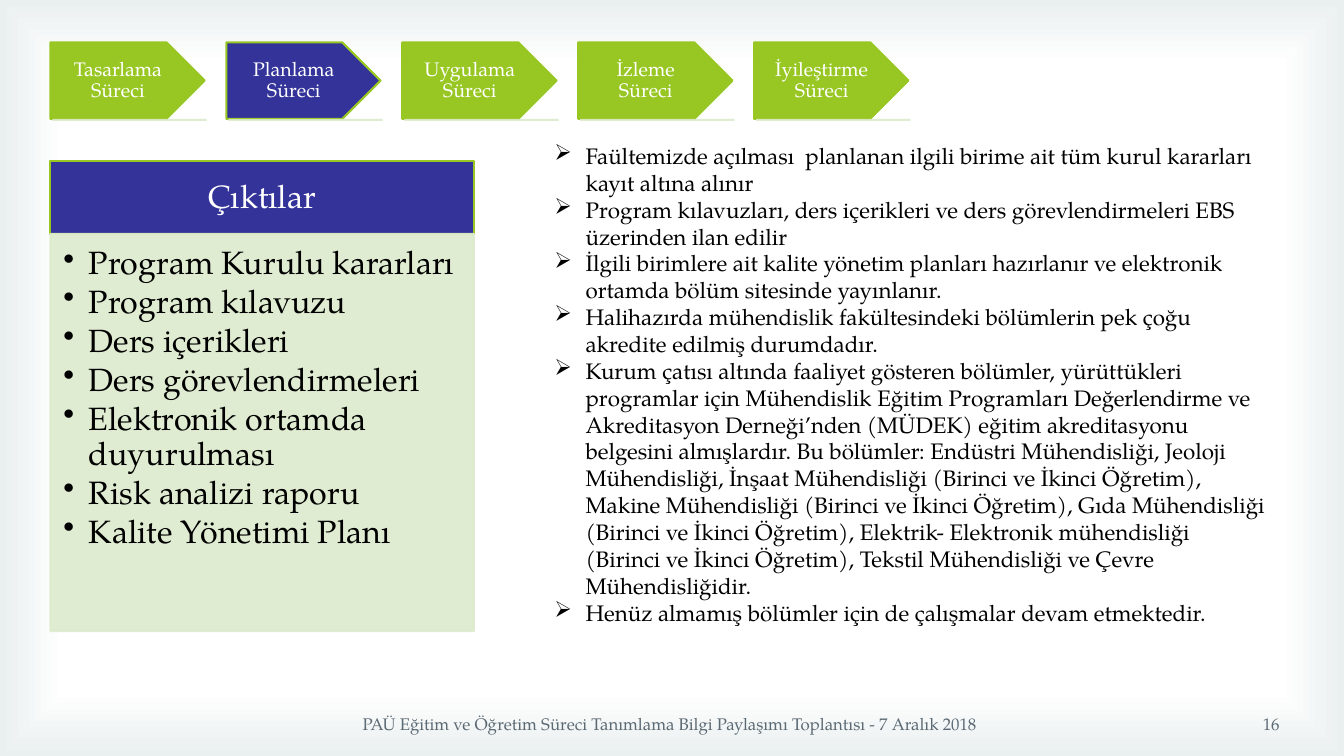
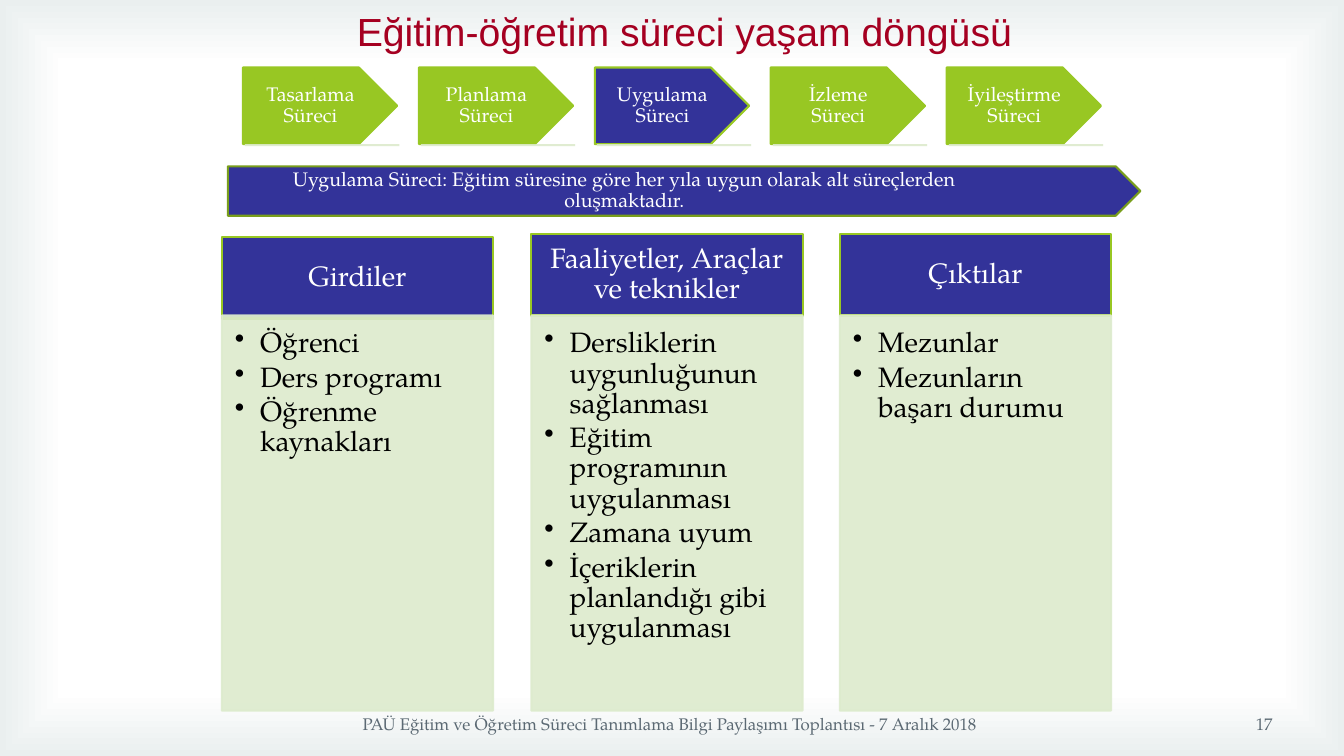
"""Build two slides on the education process life cycle."""
from dataclasses import dataclass
from typing import Any, Optional

import lxml.etree
import pptx
import pptx.dml.color
import pptx.enum.shapes
import pptx.enum.text
import pptx.oxml.ns
import pptx.util

Inches = pptx.util.Inches
Pt = pptx.util.Pt
RGB = pptx.dml.color.RGBColor
Align = pptx.enum.text.PP_ALIGN
Anchor = pptx.enum.text.MSO_ANCHOR
Preset = pptx.enum.shapes.MSO_SHAPE
qn = pptx.oxml.ns.qn


@dataclass(frozen=True)
class Theme:
    font: str = "TeX Gyre Pagella"
    title_font: str = "Arial"
    white: RGB = RGB(0xFF, 0xFF, 0xFF)
    black: RGB = RGB(0, 0, 0)
    frame: RGB = RGB(0xEA, 0xEF, 0xEF)
    green: RGB = RGB(0x98, 0xC7, 0x23)
    dark_green: RGB = RGB(0x79, 0x9E, 0x1C)
    pale_green: RGB = RGB(0xDD, 0xEB, 0xCD)
    blue: RGB = RGB(0x33, 0x33, 0x99)
    red: RGB = RGB(0xA5, 0x00, 0x21)
    slate: RGB = RGB(0x5B, 0x69, 0x73)
    title_size: float = 28
    output_size: float = 23
    column_size: float = 20
    body_size: float = 16
    step_size: float = 14
    footer_size: float = 12
    outline: float = 1.5


@dataclass(frozen=True)
class Box:
    left: float
    top: float
    width: float
    height: float

    def lengths(self) -> tuple:
        return tuple(Inches(v) for v in (self.left, self.top, self.width, self.height))


@dataclass(frozen=True)
class Style:
    size: float
    color: RGB
    font: str = Theme.font
    align: Any = Align.LEFT
    anchor: Any = Anchor.TOP
    insets: tuple = (0.1, 0.05, 0.1, 0.05)
    line_spacing: float = 1.0
    space_after: float = 0
    bullet: Optional[str] = None
    indent: float = 0
    wrap: bool = True


@dataclass(frozen=True)
class Column:
    heading: str
    items: tuple
    header: Box
    body: Box
    size: float


THEME = Theme()
STEPS = ("Tasarlama", "Planlama", "Uygulama", "İzleme", "İyileştirme")
STEP_PITCH = 6.98 / (len(STEPS) - 1)
FOOTER = "PAÜ Eğitim ve Öğretim Süreci Tanımlama Bilgi Paylaşımı Toplantısı - 7 Aralık 2018"
TITLE = "Eğitim-öğretim süreci yaşam döngüsü"
BANNER = "Uygulama Süreci: Eğitim süresine göre her yıla uygun olarak alt süreçlerden oluşmaktadır."
PLANNING_NOTES = (
    "Faültemizde açılması  planlanan ilgili birime ait tüm kurul kararları kayıt altına alınır",
    "Program kılavuzları, ders içerikleri ve ders görevlendirmeleri EBS üzerinden ilan edilir",
    "İlgili birimlere ait kalite yönetim planları hazırlanır ve elektronik ortamda bölüm "
    "sitesinde yayınlanır.",
    "Halihazırda mühendislik fakültesindeki bölümlerin pek çoğu akredite edilmiş durumdadır.",
    "Kurum çatısı altında faaliyet gösteren bölümler, yürüttükleri programlar için Mühendislik "
    "Eğitim Programları Değerlendirme ve Akreditasyon Derneği’nden (MÜDEK) eğitim akreditasyonu "
    "belgesini almışlardır. Bu bölümler: Endüstri Mühendisliği, Jeoloji Mühendisliği, İnşaat "
    "Mühendisliği (Birinci ve İkinci Öğretim), Makine Mühendisliği (Birinci ve İkinci Öğretim), "
    "Gıda Mühendisliği (Birinci ve İkinci Öğretim), Elektrik- Elektronik mühendisliği (Birinci ve "
    "İkinci Öğretim), Tekstil Mühendisliği ve Çevre Mühendisliğidir.",
    "Henüz almamış bölümler için de çalışmalar devam etmektedir.",
)
PLANNING_OUTPUTS = Column(
    "Çıktılar",
    ("Program Kurulu kararları", "Program kılavuzu", "Ders içerikleri", "Ders görevlendirmeleri",
     "Elektronik ortamda duyurulması", "Risk analizi raporu", "Kalite Yönetimi Planı"),
    Box(0.5, 1.6, 4.2, 0.72), Box(0.5, 2.32, 4.2, 3.94), THEME.output_size,
)


def practice_column(left: float, top: float, heading: str, *items: str) -> Column:
    return Column(heading, items, Box(left, top, 2.69, 0.81), Box(left, 3.13, 2.69, 3.92),
                  THEME.column_size)


PRACTICE_COLUMNS = (
    practice_column(2.2, 2.35, "Girdiler", "Öğrenci", "Ders programı", "Öğrenme kaynakları"),
    practice_column(5.27, 2.32, "Faaliyetler, Araçlar ve teknikler",
                    "Dersliklerin uygunluğunun sağlanması", "Eğitim programının uygulanması",
                    "Zamana uyum", "İçeriklerin planlandığı gibi uygulanması"),
    practice_column(8.33, 2.32, "Çıktılar", "Mezunlar", "Mezunların başarı durumu"),
)


def write(frame: Any, lines: tuple, style: Style) -> None:
    frame.word_wrap = style.wrap
    frame.vertical_anchor = style.anchor
    (frame.margin_left, frame.margin_top,
     frame.margin_right, frame.margin_bottom) = (Inches(v) for v in style.insets)
    for index, line in enumerate(lines):
        paragraph = frame.add_paragraph() if index else frame.paragraphs[0]
        paragraph.text = line
        paragraph.alignment = style.align
        paragraph.line_spacing = style.line_spacing
        paragraph.space_after = Pt(style.space_after)
        if style.bullet:
            properties = paragraph._p.get_or_add_pPr()
            properties.set("marL", str(Inches(style.indent)))
            properties.set("indent", str(-Inches(style.indent)))
            lxml.etree.SubElement(properties, qn("a:buChar"), char=style.bullet)
        paragraph.font.size = Pt(style.size)
        paragraph.font.name = style.font
        paragraph.font.color.rgb = style.color


def add_text(slide: Any, box: Box, lines: tuple, style: Style) -> None:
    write(slide.shapes.add_textbox(*box.lengths()).text_frame, lines, style)


def add_panel(slide: Any, preset: Any, box: Box, fill: RGB, line: RGB,
              lines: tuple, style: Style) -> Any:
    panel = slide.shapes.add_shape(preset, *box.lengths())
    panel.shadow.inherit = False
    panel.fill.solid()
    panel.fill.fore_color.rgb = fill
    panel.line.color.rgb = line
    panel.line.width = Pt(THEME.outline)
    write(panel.text_frame, lines, style)
    return panel


def soften(part: Any) -> None:
    for color in part.element.spPr.iter(qn("a:srgbClr")):
        lxml.etree.SubElement(color, qn("a:alpha"), val="90000")


def label_style(size: float, insets: tuple) -> Style:
    return Style(size, THEME.white, align=Align.CENTER, anchor=Anchor.MIDDLE,
                 insets=insets, line_spacing=0.9)


def add_cycle(slide: Any, left: float, top: float, current: str) -> None:
    style = label_style(THEME.step_size, (0.11, 0.06, 0.11, 0.06))
    for index, step in enumerate(STEPS):
        box = Box(left + index * STEP_PITCH, top, 1.53, 0.76)
        fill = THEME.blue if step == current else THEME.green
        add_panel(slide, Preset.PENTAGON, box, fill, THEME.green, (f"{step} Süreci",), style)
        start, level = Inches(box.left + 0.02), Inches(top + 0.77)
        underline = slide.shapes.add_connector(
            pptx.enum.shapes.MSO_CONNECTOR.STRAIGHT,
            start, level, start + Inches(box.width), level)
        underline.line.color.rgb = THEME.pale_green
        underline.line.width = Pt(THEME.outline)
        soften(underline)
        lxml.etree.SubElement(underline.element.spPr, qn("a:effectLst"))


def add_column(slide: Any, column: Column) -> None:
    add_panel(slide, Preset.RECTANGLE, column.header, THEME.blue, THEME.green,
              (column.heading,), label_style(column.size, (0.16, 0.09, 0.16, 0.09)))
    items = Style(column.size, THEME.black, insets=(0.13, 0.13, 0.16, 0.17), line_spacing=0.9,
                  space_after=3, bullet="•", indent=0.25)
    soften(add_panel(slide, Preset.RECTANGLE, column.body, THEME.pale_green, THEME.pale_green,
                     column.items, items))


def add_footer(slide: Any, number: int, number_left: float) -> None:
    for box, text, align in (
        (Box(1.54, 6.98, 10.21, 0.4), FOOTER, Align.CENTER),
        (Box(number_left, 6.98, 3.11, 0.4), str(number), Align.RIGHT),
    ):
        add_text(slide, box, (text,),
                 Style(THEME.footer_size, THEME.slate, align=align, anchor=Anchor.MIDDLE))


def set_background(master: Any) -> None:
    fill = master.background.fill
    fill.gradient()
    for stop, position, color in zip(fill.gradient_stops, (0.83, 1), (THEME.white, THEME.frame)):
        stop.position = position
        stop.color.rgb = color
    linear = next(master.element.iter(qn("a:lin")))
    gradient = linear.getparent()
    gradient.remove(linear)
    route = lxml.etree.SubElement(gradient, qn("a:path"), {"path": "rect"})
    lxml.etree.SubElement(route, qn("a:fillToRect"), dict.fromkeys("ltrb", "50000"))


def build_planning(slide: Any) -> None:
    add_cycle(slide, 0.5, 0.42, "Planlama")
    add_column(slide, PLANNING_OUTPUTS)
    add_text(slide, Box(5.4, 1.36, 7.27, 4.95), PLANNING_NOTES,
             Style(THEME.body_size, THEME.black, bullet="➢", indent=0.31))
    add_footer(slide, 16, 9.68)


def build_practice(slide: Any) -> None:
    add_cycle(slide, 2.41, 0.67, "Uygulama")
    for column in PRACTICE_COLUMNS:
        add_column(slide, column)
    add_panel(slide, Preset.PENTAGON, Box(2.26, 1.65, 9.05, 0.49), THEME.blue, THEME.dark_green,
              (BANNER,), label_style(THEME.step_size, (0.08, 0.06, 1.14, 0.06)))
    add_text(slide, Box(3.44, 0.02, 6.89, 0.57), (TITLE,),
             Style(THEME.title_size, THEME.red, font=THEME.title_font, wrap=False))
    add_footer(slide, 17, 9.61)


def main() -> None:
    deck = pptx.Presentation()
    deck.slide_width, deck.slide_height = Inches(13.33), Inches(7.5)
    set_background(deck.slide_master)
    for build in (build_planning, build_practice):
        build(deck.slides.add_slide(deck.slide_layouts[6]))
    deck.save("out.pptx")


if __name__ == "__main__":
    main()
